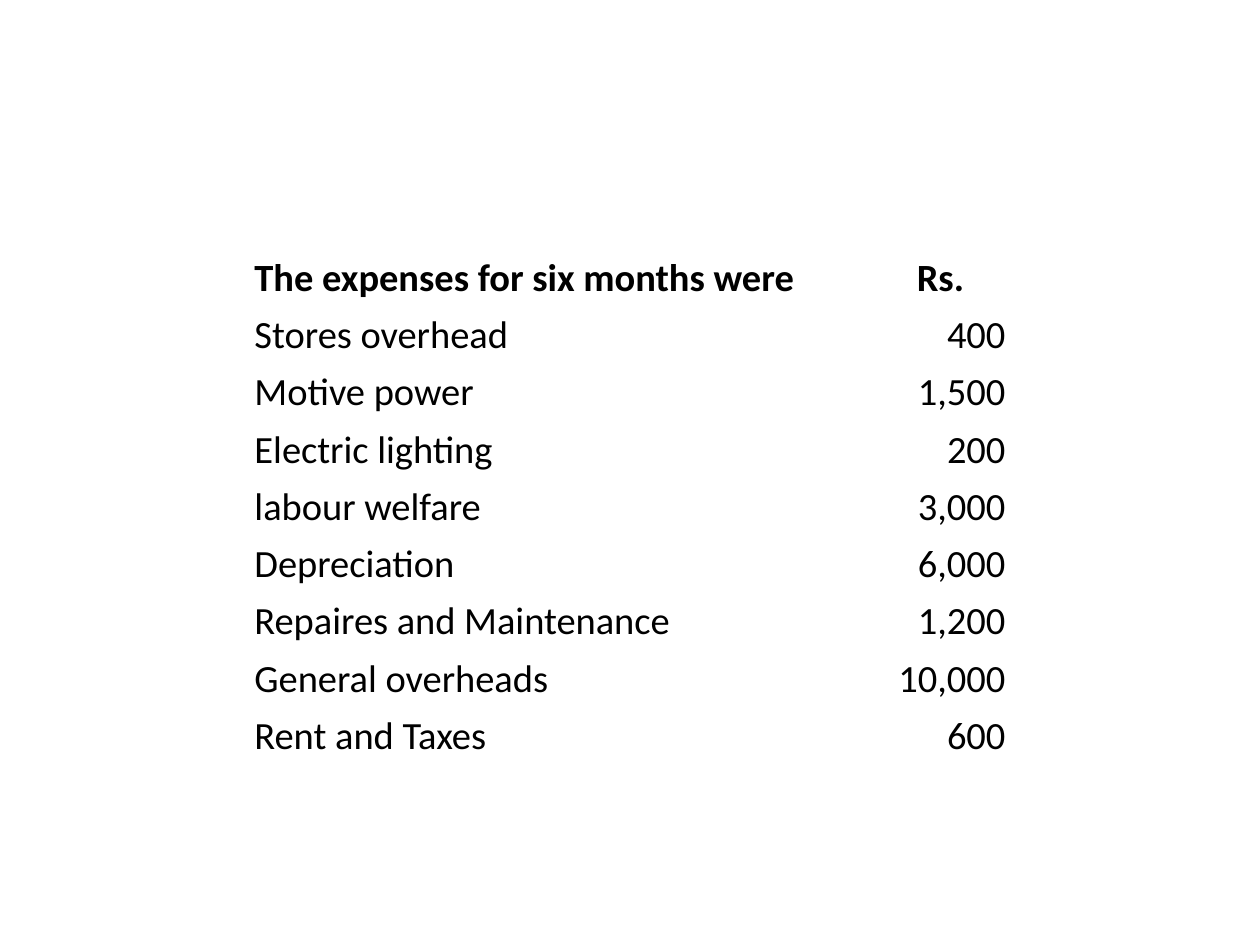
from dataclasses import dataclass

from pptx import Presentation
from pptx.dml.color import RGBColor
from pptx.enum.text import MSO_ANCHOR, PP_ALIGN
from pptx.table import _Cell
from pptx.util import Pt

LEFT, CENTER, RIGHT = PP_ALIGN.LEFT, PP_ALIGN.CENTER, PP_ALIGN.RIGHT
BOTTOM = MSO_ANCHOR.BOTTOM


@dataclass(frozen=True)
class Theme:
    font: str = "Calibri"
    size: float = 22
    text: RGBColor = RGBColor(0, 0, 0)
    inset: float = 0.72


@dataclass(frozen=True)
class Expense:
    label: str
    amount: int


THEME = Theme()
TABLE_LEFT, TABLE_TOP = 144.72, 139.68
COLUMN_WIDTHS = (339.84, 90.72)
ROW_HEIGHT = 32.72
CURRENCY_INDENT = 15

EXPENSES = [
    Expense("Stores overhead", 400),
    Expense("Motive power", 1500),
    Expense("Electric lighting", 200),
    Expense("labour welfare", 3000),
    Expense("Depreciation", 6000),
    Expense("Repaires and Maintenance", 1200),
    Expense("General overheads", 10000),
    Expense("Rent and Taxes", 600),
]


def write_cell(cell: _Cell, text: str, *, align: PP_ALIGN = LEFT,
               bold: bool = False, indent: float = 0) -> None:
    cell.fill.background()
    cell.vertical_anchor = BOTTOM
    cell.margin_left = Pt(THEME.inset + indent)
    cell.margin_right = cell.margin_top = Pt(THEME.inset)
    cell.margin_bottom = Pt(0)
    p = cell.text_frame.paragraphs[0]
    p.alignment = align
    r = p.add_run()
    r.text = text
    r.font.name = THEME.font
    r.font.size = Pt(THEME.size)
    r.font.bold = bold
    r.font.color.rgb = THEME.text


def main() -> None:
    prs = Presentation()
    prs.slide_width, prs.slide_height = Pt(720), Pt(540)
    s = prs.slides.add_slide(prs.slide_layouts[6])

    row_count = len(EXPENSES) + 1
    table = s.shapes.add_table(
        row_count, len(COLUMN_WIDTHS), Pt(TABLE_LEFT), Pt(TABLE_TOP),
        Pt(sum(COLUMN_WIDTHS)), Pt(ROW_HEIGHT * row_count)).table
    table.first_row = table.horz_banding = False
    for column, width in zip(table.columns, COLUMN_WIDTHS):
        column.width = Pt(width)
    for row in table.rows:
        row.height = Pt(ROW_HEIGHT)

    write_cell(table.cell(0, 0), "The expenses for six months were", bold=True)
    write_cell(table.cell(0, 1), "Rs.", align=CENTER, bold=True,
               indent=CURRENCY_INDENT)
    for i, expense in enumerate(EXPENSES, start=1):
        write_cell(table.cell(i, 0), expense.label)
        write_cell(table.cell(i, 1), f"{expense.amount:,}", align=RIGHT)

    prs.save("out.pptx")


if __name__ == "__main__":
    main()
